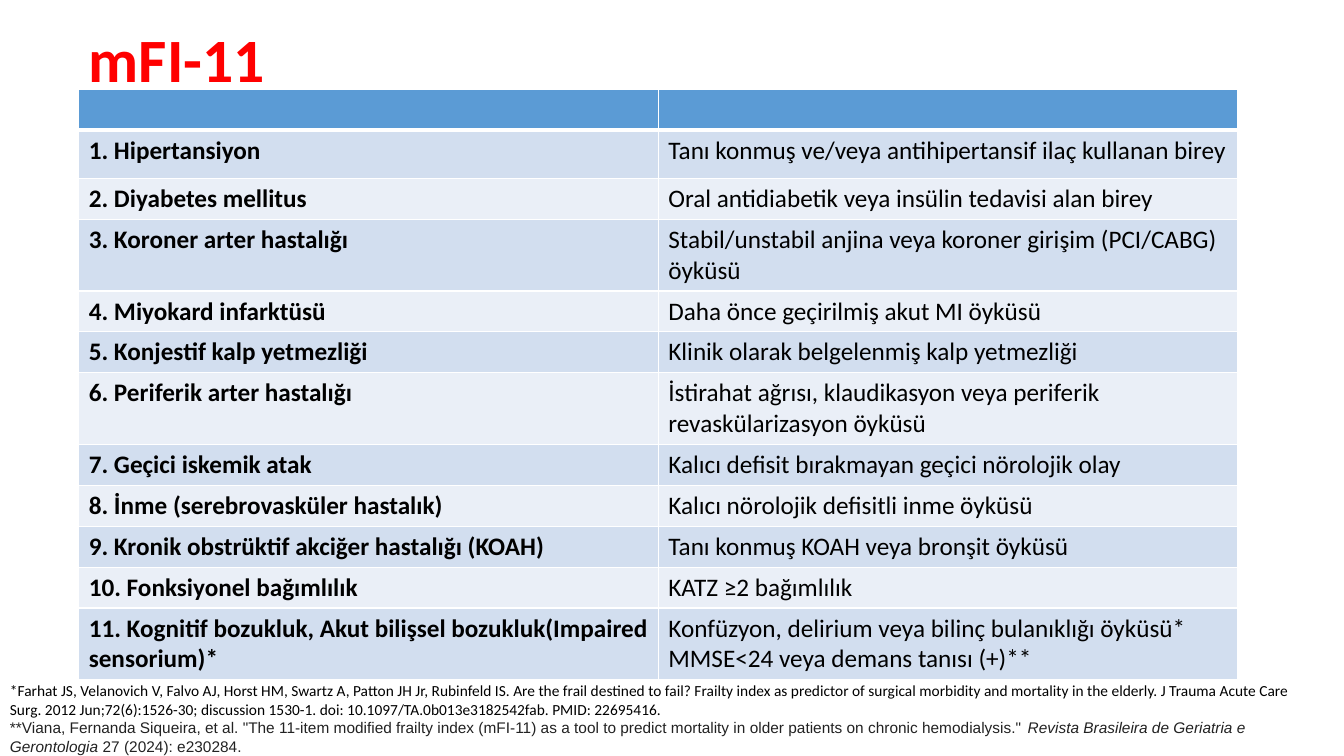
from lxml.etree import SubElement
from pptx import Presentation
from pptx.dml.color import RGBColor
from pptx.enum.text import MSO_ANCHOR as Anchor, MSO_AUTO_SIZE as AutoSize, PP_ALIGN as Align
from pptx.oxml.ns import qn
from pptx.util import Emu, Pt

PX = 9525
HEADER_HEIGHT, FIRST_HEIGHT, LINE_HEIGHT, DOUBLE_HEIGHT = 38, 46, 39, 68
TWO_LINE_ITEMS = {3, 6, 11}
HEADER_FILL, ODD_FILL, EVEN_FILL = "5B9BD5", "D2DEEF", "EAEFF7"

CRITERIA = [
    ("Hipertansiyon", "Tanı konmuş ve/veya antihipertansif ilaç kullanan birey"),
    ("Diyabetes mellitus", "Oral antidiabetik veya insülin tedavisi alan birey"),
    ("Koroner arter hastalığı", "Stabil/unstabil anjina veya koroner girişim (PCI/CABG) öyküsü"),
    ("Miyokard infarktüsü", "Daha önce geçirilmiş akut MI öyküsü"),
    ("Konjestif kalp yetmezliği", "Klinik olarak belgelenmiş kalp yetmezliği"),
    ("Periferik arter hastalığı", "İstirahat ağrısı, klaudikasyon veya periferik revaskülarizasyon öyküsü"),
    ("Geçici iskemik atak", "Kalıcı defisit bırakmayan geçici nörolojik olay"),
    ("İnme (serebrovasküler hastalık)", "Kalıcı nörolojik defisitli inme öyküsü"),
    ("Kronik obstrüktif akciğer hastalığı (KOAH)", "Tanı konmuş KOAH veya bronşit öyküsü"),
    ("Fonksiyonel bağımlılık", "KATZ ≥2 bağımlılık"),
    ("Kognitif bozukluk, Akut bilişsel bozukluk(Impaired sensorium)*",
     "Konfüzyon, delirium veya bilinç bulanıklığı öyküsü*\nMMSE<24 veya demans tanısı (+)**"),
]
FARHAT = (
    "*Farhat JS, Velanovich V, Falvo AJ, Horst HM, Swartz A, Patton JH Jr, Rubinfeld IS. "
    "Are the frail destined to fail? Frailty index as predictor of surgical morbidity and "
    "mortality in the elderly. J Trauma Acute Care Surg. 2012 Jun;72(6):1526-30; "
    "discussion 1530-1. doi: 10.1097/TA.0b013e3182542fab. PMID: 22695416."
)
VIANA = (
    '**Viana, Fernanda Siqueira, et al. "The 11-item modified frailty index (mFI-11) as a tool '
    'to predict mortality in older patients on chronic hemodialysis." '
)
JOURNAL = "Revista Brasileira de Geriatria e Gerontologia"
ISSUE = " 27 (2024): e230284."


def px(*lengths):
    """Turn whole px lengths into EMU."""
    return [Emu(length * PX) for length in lengths]


def color(hex_code):
    """Turn a hex string into a colour."""
    return RGBColor.from_string(hex_code)


def style(run, size, hex_code="000000", face="Calibri", bold=False, italic=False):
    """Format one run of text."""
    font = run.font
    font.name, font.size, font.bold, font.italic = face, Pt(size), bold, italic
    font.color.rgb = color(hex_code)


def outline(cell, is_header):
    """Give a cell its white borders, heavier below the header."""
    properties = cell._tc.get_or_add_tcPr()
    for side in "LRTB":
        width = 3 if is_header and side == "B" else 1
        border = SubElement(properties, qn(f"a:ln{side}"), w=str(Pt(width)))
        SubElement(SubElement(border, qn("a:solidFill")), qn("a:srgbClr"), val="FFFFFF")


def fill_cell(cell, text, hex_code, bold=False, is_header=False):
    """Write and format one table cell."""
    outline(cell, is_header)
    cell.fill.solid()
    cell.fill.fore_color.rgb = color(hex_code)
    cell.text = text
    for paragraph in cell.text_frame.paragraphs:
        for run in paragraph.runs:
            style(run, 18, bold=bold)


def place_heading(slide, left, top, width, height):
    """Move and format the title placeholder."""
    heading = slide.shapes.title
    heading.left, heading.top, heading.width, heading.height = px(left, top, width, height)
    frame = heading.text_frame
    frame.text = "mFI-11"
    frame.auto_size, frame.vertical_anchor = AutoSize.NONE, Anchor.MIDDLE
    line = frame.paragraphs[0]
    line.alignment, line.line_spacing = Align.LEFT, 0.9
    style(line.runs[0], 44, "FF0000", bold=True)


def place_criteria(slide, left, top, width):
    """Build the table of numbered index items and their definitions."""
    heights = [HEADER_HEIGHT, FIRST_HEIGHT] + [
        DOUBLE_HEIGHT if number in TWO_LINE_ITEMS else LINE_HEIGHT
        for number in range(2, len(CRITERIA) + 1)
    ]
    box = px(left, top, width, sum(heights))
    criteria = slide.shapes.add_table(len(heights), 2, *box).table
    for column in criteria.columns:
        column.width = px(width // 2)[0]
    for row, height in zip(criteria.rows, px(*heights)):
        row.height = height
    for column in range(2):
        fill_cell(criteria.cell(0, column), "", HEADER_FILL, is_header=True)
    for number, (condition, definition) in enumerate(CRITERIA, 1):
        band = ODD_FILL if number % 2 else EVEN_FILL
        fill_cell(criteria.cell(number, 0), f"{number}. {condition}", band, bold=True)
        fill_cell(criteria.cell(number, 1), definition, band)


def place_references(slide, left, top, width, height):
    """Write the two source references."""
    frame = slide.shapes.add_textbox(*px(left, top, width, height)).text_frame
    frame.word_wrap = True
    frame.auto_size = AutoSize.SHAPE_TO_FIT_TEXT
    frame.text = FARHAT
    style(frame.paragraphs[0].runs[0], 11)
    viana = frame.add_paragraph()
    for part in (VIANA, JOURNAL, ISSUE):
        run = viana.add_run()
        run.text = part
        style(run, 11, "222222", "Arial", italic=part == JOURNAL)


def main():
    """Build and save the slide."""
    deck = Presentation()
    deck.slide_width, deck.slide_height = px(1280, 720)
    slide = deck.slides.add_slide(deck.slide_layouts[5])
    place_heading(slide, 75, 14, 1104, 92)
    place_criteria(slide, 75, 85, 1104)
    place_references(slide, 0, 644, 1254, 81)
    deck.save("out.pptx")


if __name__ == "__main__":
    main()
